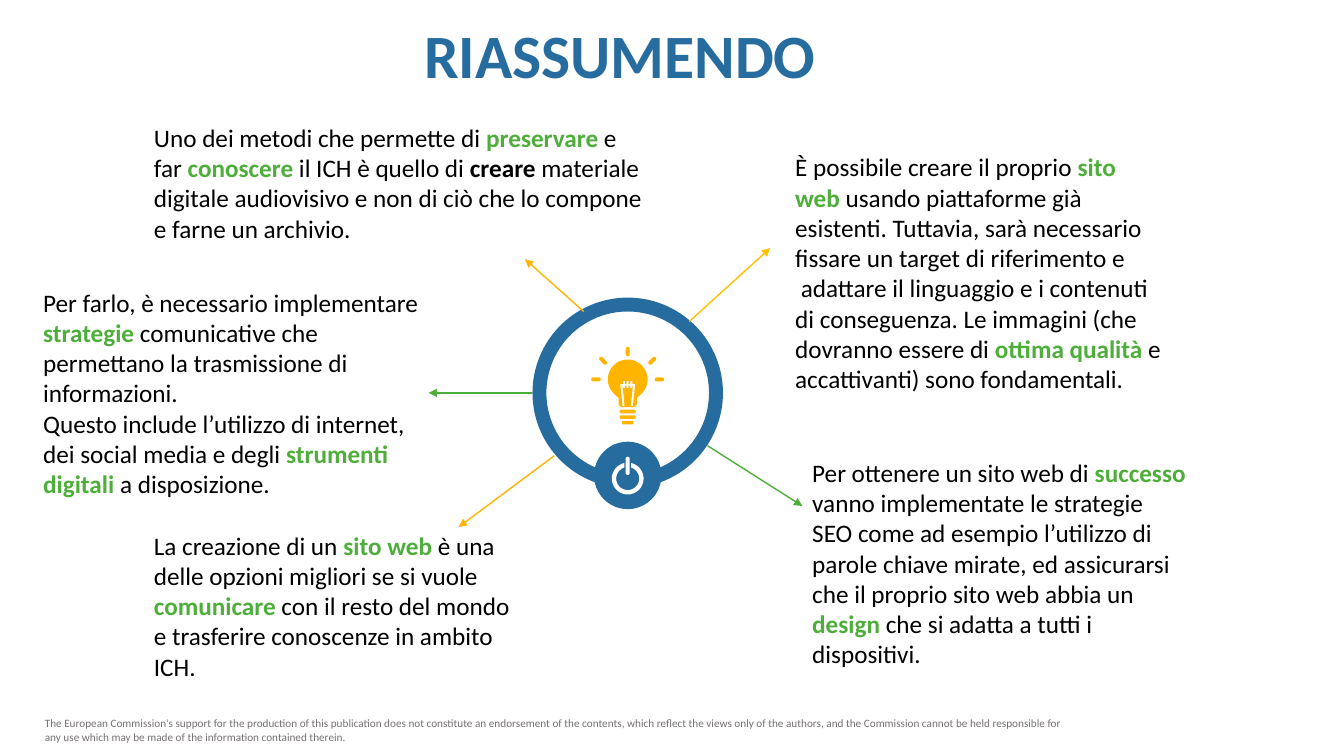
from math import cos, radians, sin

from lxml.etree import SubElement
from pptx import Presentation
from pptx.dml.color import RGBColor
from pptx.enum.shapes import MSO_CONNECTOR, MSO_SHAPE
from pptx.enum.text import MSO_ANCHOR
from pptx.oxml.ns import qn
from pptx.util import Cm, Pt

BLUE, GREEN, AMBER, GOLD = "266C9F", "4EAE3A", "FFB500", "FFC000"
BLACK, WHITE, GREY = "000000", "FFFFFF", "767171"
CENTRE = 15.82

NOTES = [
    ((3.63, 13.21, 9.7, 4.1), [
        ["La creazione di un ", ("sito web ", GREEN), "è una"],
        ["delle opzioni migliori se si vuole"],
        [("comunicare", GREEN), " con il resto del mondo e trasferire conoscenze in ambito"],
        ["ICH."],
    ]),
    ((19.79, 3.67, 9.75, 6.4), [
        ["È possibile creare il proprio ", ("sito", GREEN)],
        [("web ", GREEN), "usando piattaforme già"],
        ["esistenti. Tuttavia, sarà necessario"],
        ["fissare un target di riferimento e"],
        [" adattare il linguaggio e i contenuti di conseguenza. Le immagini (che"],
        ["dovranno essere di ", ("ottima qualità ", GREEN), "e accattivanti) sono fondamentali."],
    ]),
    ((20.22, 11.36, 10.01, 5.66), [
        ["Per ottenere un sito web di ", ("successo", GREEN), " vanno implementate le strategie"],
        ["SEO come ad esempio l’utilizzo di"],
        ["parole chiave mirate, ed assicurarsi"],
        ["che il proprio sito web abbia un"],
        [("design", GREEN), " che si adatta a tutti i"],
        ["dispositivi."],
    ]),
    ((3.63, 2.94, 12.95, 3.33), [
        ["Uno dei metodi che permette di ", ("preservare", GREEN), " e"],
        ["far ", ("conoscere", GREEN), " il ICH è quello di ", ("creare", BLACK),
         " materiale digitale audiovisivo e non di ciò che lo compone e farne un archivio."],
    ]),
    ((0.84, 7.46, 10.24, 4.88), [
        ["Per farlo, è necessario implementare ", ("strategie", GREEN),
         " comunicative che permettano la trasmissione di informazioni."],
        ["Questo include l’utilizzo di internet,"],
        ["dei social media e degli ", ("strumenti", GREEN)],
        [("digitali ", GREEN), "a disposizione."],
    ]),
]

ARROWS = [
    ((13.41, 9.9), (10.8, 9.9), GREEN),
    ((17.83, 11.23), (20.22, 12.75), GREEN),
    ((14.71, 7.85), (13.23, 6.53), AMBER),
    ((17.37, 8.1), (19.41, 6.25), GOLD),
    ((13.97, 11.48), (11.56, 13.28), AMBER),
]

DISCLAIMER = (
    "The European Commission's support for the production of this publication does not "
    "constitute an endorsement of the contents, which reflect the views only of the authors, "
    "and the Commission cannot be held responsible for any use which may be made of the "
    "information contained therein."
)


def colour(value):
    """Turn a hex string into a colour."""
    return RGBColor.from_string(value)


def add_text(slide, box, paragraphs, size=18, fill=BLACK, anchor=MSO_ANCHOR.MIDDLE, spacing=1.0):
    """Add a text box; a run given as (text, colour) is bold."""
    frame = slide.shapes.add_textbox(*map(Cm, box)).text_frame
    frame.word_wrap = True
    frame.vertical_anchor = anchor
    for index, runs in enumerate(paragraphs):
        paragraph = frame.add_paragraph() if index else frame.paragraphs[0]
        paragraph.line_spacing = spacing
        for item in runs:
            bold = isinstance(item, tuple)
            run = paragraph.add_run()
            run.text, run_colour = item if bold else (item, fill)
            run.font.name = "Calibri"
            run.font.size = Pt(size)
            run.font.bold = bold
            run.font.color.rgb = colour(run_colour)


def paint(shape, fill):
    """Give a shape a plain fill without outline or shadow."""
    shape.shadow.inherit = False
    shape.fill.solid()
    shape.fill.fore_color.rgb = colour(fill)
    shape.line.fill.background()


def add_round(slide, kind, centre_y, size, fill):
    """Add a round preset shape on the central axis."""
    shape = slide.shapes.add_shape(
        kind, Cm(CENTRE - size / 2), Cm(centre_y - size / 2), Cm(size), Cm(size))
    paint(shape, fill)
    return shape


def arc(across, down, radius, start, end, steps=24):
    """List points along an arc, its angles in degrees clockwise from the right."""
    angles = [radians(start + (end - start) * step / steps) for step in range(steps + 1)]
    return [(across + radius * cos(angle), down + radius * sin(angle)) for angle in angles]


def capsule(across, down, length, thickness, angle=0):
    """List the outline of a bar with round ends."""
    reach = (length - thickness) / 2
    shift_x, shift_y = reach * cos(radians(angle)), reach * sin(radians(angle))
    return (arc(across + shift_x, down + shift_y, thickness / 2, angle - 90, angle + 90, 8)
            + arc(across - shift_x, down - shift_y, thickness / 2, angle + 90, angle + 270, 8))


def add_icon(slide, contours, fill):
    """Add one freeform of closed contours, measured from the central axis."""
    contours = [[(Cm(CENTRE + across), Cm(down)) for across, down in points]
                for points in contours]
    builder = slide.shapes.build_freeform(*contours[0][0])
    for index, points in enumerate(contours):
        if index:
            builder.move_to(*points[0])
        builder.add_line_segments(points[1:], close=True)
    paint(builder.convert_to_shape(), fill)


def add_line(slide, start, end, stroke):
    """Add an arrow from start to end."""
    line = slide.shapes.add_connector(MSO_CONNECTOR.STRAIGHT, *map(Cm, start + end))
    line.line.color.rgb = colour(stroke)
    line.line.width = Pt(1)
    SubElement(line.line._get_or_add_ln(), qn("a:tailEnd"), type="triangle")
    SubElement(line._element.spPr, qn("a:effectLst"))


def filament():
    """List the outline of the comb-shaped filament."""
    ticks = (-0.09, 0, 0.09)
    upper = [(tick + side * 0.025, level) for tick in ticks
             for side, level in ((-1, 9.67), (-1, 9.6), (1, 9.6), (1, 9.67))]
    lower = [(tick + side * 0.025, level) for tick in reversed(ticks)
             for side, level in ((1, 9.72), (1, 9.78), (-1, 9.78), (-1, 9.72))]
    return ([(-0.19, 9.67)] + upper + [(0.19, 9.67), (0.13, 10.24), (0.08, 10.22), (0.13, 9.72)]
            + lower + [(-0.13, 9.72), (-0.08, 10.22), (-0.13, 10.24)])


def add_bulb(slide):
    """Draw the light bulb with its rays, socket and filament."""
    middle = 9.56
    glass = (arc(0, middle, 0.5, 135, 405, 48) + [(0.23, 10.03)]
             + arc(0.13, 10.16, 0.1, 0, 90, 8) + arc(-0.13, 10.16, 0.1, 90, 180, 8)
             + [(-0.23, 10.03)])
    socket = [capsule(0, down, length, 0.09)
              for down, length in ((10.37, 0.41), (10.51, 0.41), (10.65, 0.3))]
    rays = [capsule(across, middle + down, 0.24, 0.1, angle)
            for across, down, angle in ((0, -0.7, 90), (-0.8, 0, 0), (0.8, 0, 0),
                                        (-0.62, -0.47, 45), (0.62, -0.47, -45))]
    add_icon(slide, [glass, filament(), *socket, *rays], AMBER)


def add_power_button(slide):
    """Draw the round power button."""
    middle = 12.06
    add_round(slide, MSO_SHAPE.OVAL, 11.98, 1.7, BLUE)
    ring = arc(0, middle, 0.4, -78, 258, 48) + arc(0, middle, 0.29, 253, -73, 48)
    add_icon(slide, [ring, capsule(0, 11.74, 0.46, 0.1, 90)], WHITE)


def main():
    """Build the summary slide and save it."""
    presentation = Presentation()
    presentation.slide_width, presentation.slide_height = Cm(33.87), Cm(19.05)
    slide = presentation.slides.add_slide(presentation.slide_layouts[6])
    add_text(slide, (0.88, 17.93, 26.57, 0.94), [[DISCLAIMER]], size=8, fill=GREY,
             anchor=MSO_ANCHOR.TOP)
    add_text(slide, (10.44, 0.51, 10.49, 2.01), [[("RIASSUMENDO", BLUE)]], size=44,
             anchor=MSO_ANCHOR.TOP, spacing=0.9)
    add_round(slide, MSO_SHAPE.DONUT, 9.9, 4.8, BLUE).adjustments[0] = 0.073
    add_power_button(slide)
    add_bulb(slide)
    for start, end, stroke in ARROWS:
        add_line(slide, start, end, stroke)
    for box, paragraphs in NOTES:
        add_text(slide, box, paragraphs)
    presentation.save("out.pptx")


if __name__ == "__main__":
    main()
